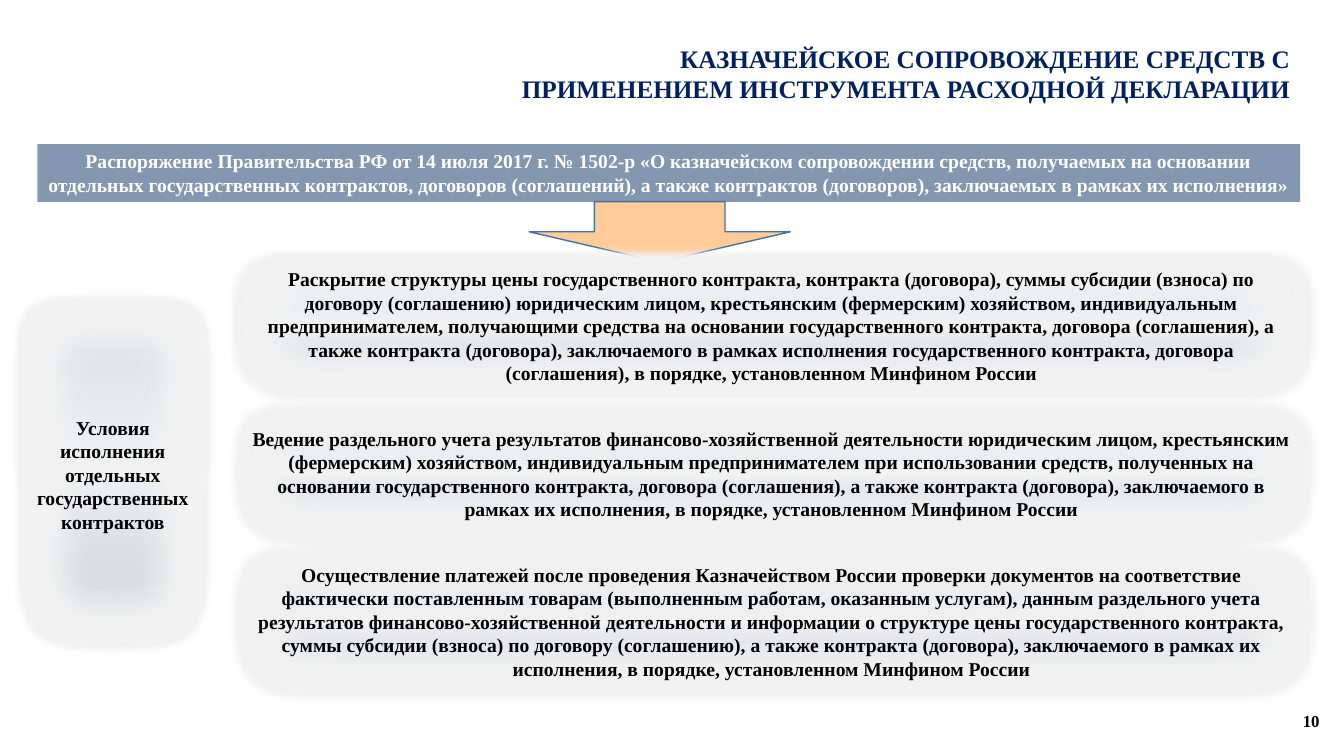
from lxml import etree
from pptx import Presentation
from pptx.dml.color import RGBColor
from pptx.enum.shapes import MSO_SHAPE
from pptx.enum.text import MSO_ANCHOR, PP_ALIGN
from pptx.oxml import parse_xml
from pptx.oxml.ns import nsdecls, qn
from pptx.util import Pt

RECTANGLE, DOWN_ARROW = MSO_SHAPE.RECTANGLE, MSO_SHAPE.DOWN_ARROW
LEFT_MARGIN, RIGHT_EDGE = 26.64, 928.8
OUTLINE = "43739E"
GRADIENT = f"""<a:gradFill {nsdecls("a")} rotWithShape="1"><a:gsLst>
<a:gs pos="0"><a:srgbClr val="D6DCE5"/></a:gs>
<a:gs pos="50000"><a:srgbClr val="F2F2F2"/></a:gs>
<a:gs pos="99000"><a:srgbClr val="ADB9CA"><a:alpha val="34000"/></a:srgbClr></a:gs>
</a:gsLst><a:lin ang="5400000" scaled="0"/></a:gradFill>"""


def color(value):
    return RGBColor.from_string(value)


def write(shape, text, size, ink, align, anchor):
    frame = shape.text_frame
    frame.word_wrap = True
    frame.vertical_anchor = anchor
    para = frame.paragraphs[0]
    para.text = text
    para.alignment = align
    para.font.name = "Times New Roman"
    para.font.size = Pt(size)
    para.font.bold = True
    para.font.color.rgb = color(ink)


deck = Presentation()
deck.slide_width, deck.slide_height = Pt(960), Pt(540)
page = deck.slides.add_slide(deck.slide_layouts[5])
shapes = page.shapes

title = shapes.title
title.left, title.top, title.width, title.height = Pt(339), Pt(27.4), Pt(589.8), Pt(49.7)
write(title, "КАЗНАЧЕЙСКОЕ СОПРОВОЖДЕНИЕ СРЕДСТВ С ПРИМЕНЕНИЕМ ИНСТРУМЕНТА "
      "РАСХОДНОЙ ДЕКЛАРАЦИИ", 18, "002060", PP_ALIGN.RIGHT, MSO_ANCHOR.TOP)

banner = shapes.add_shape(RECTANGLE, Pt(LEFT_MARGIN), Pt(103), Pt(RIGHT_EDGE + 7.2 - 7.2 - LEFT_MARGIN),
                          Pt(41.2))
banner.shadow.inherit = False
banner.fill.solid()
banner.fill.fore_color.rgb = color("8497B0")
banner.line.fill.background()
write(banner, "Распоряжение Правительства РФ от 14 июля 2017 г. № 1502-р «О казначейском "
      "сопровождении средств, получаемых на основании отдельных государственных контрактов, "
      "договоров (соглашений), а также контрактов (договоров), заключаемых в рамках их исполнения»",
      14, "FFFFFF", PP_ALIGN.CENTER, MSO_ANCHOR.TOP)

arrow = shapes.add_shape(DOWN_ARROW, Pt(378), Pt(144), Pt(186.5), Pt(43.2))
arrow.shadow.inherit = False
arrow.fill.solid()
arrow.fill.fore_color.rgb = color("FFCC99")
arrow.line.color.rgb = color(OUTLINE)
arrow.line.width = Pt(1)

conditions = [
    (18.7, 218.9, 123.8, 239.8, "Условия исполнения отдельных государственных контрактов"),
    (172.8, 187.2, 756.7, 91.4,
     "Раскрытие структуры цены государственного контракта, контракта (договора), суммы субсидии "
     "(взноса) по договору (соглашению) юридическим лицом, крестьянским (фермерским) хозяйством, "
     "индивидуальным предпринимателем, получающими средства на основании государственного контракта, "
     "договора (соглашения), а также контракта (договора), заключаемого в рамках исполнения "
     "государственного контракта, договора (соглашения), в порядке, установленном Минфином России"),
    (172.8, 295.2, 756.7, 86.4,
     "Ведение раздельного учета результатов финансово-хозяйственной деятельности юридическим лицом, "
     "крестьянским (фермерским) хозяйством, индивидуальным предпринимателем при использовании "
     "средств, полученных на основании государственного контракта, договора (соглашения), а также "
     "контракта (договора), заключаемого в рамках их исполнения, в порядке, установленном Минфином "
     "России"),
    (172.8, 396.7, 756.7, 94.3,
     "Осуществление платежей после проведения Казначейством России проверки документов на "
     "соответствие фактически поставленным товарам (выполненным работам, оказанным услугам), данным "
     "раздельного учета результатов финансово-хозяйственной деятельности и информации о структуре "
     "цены государственного контракта, суммы субсидии (взноса) по договору (соглашению), а также "
     "контракта (договора), заключаемого в рамках их исполнения, в порядке, установленном Минфином "
     "России"),
]
for left, top, width, height, text in conditions:
    box = shapes.add_shape(RECTANGLE, Pt(left), Pt(top), Pt(width), Pt(height))
    box.shadow.inherit = False
    box.line.color.rgb = color(OUTLINE)
    box.line.width = Pt(1)
    properties = box._element.spPr
    properties.find(qn("a:prstGeom")).addnext(parse_xml(GRADIENT))
    effects = properties.find(qn("a:effectLst"))
    glow = etree.SubElement(effects, qn("a:glow"), rad=str(Pt(8)))
    etree.SubElement(glow, qn("a:srgbClr"), val="F2F2F2")
    etree.SubElement(effects, qn("a:softEdge"), rad=str(Pt(25)))
    write(box, text, 14, "000000", PP_ALIGN.CENTER, MSO_ANCHOR.MIDDLE)

page_number = shapes.add_textbox(Pt(733.7), Pt(500.4), Pt(216), Pt(28.8))
write(page_number, "10", 12, "000000", PP_ALIGN.RIGHT, MSO_ANCHOR.MIDDLE)

deck.save("out.pptx")
